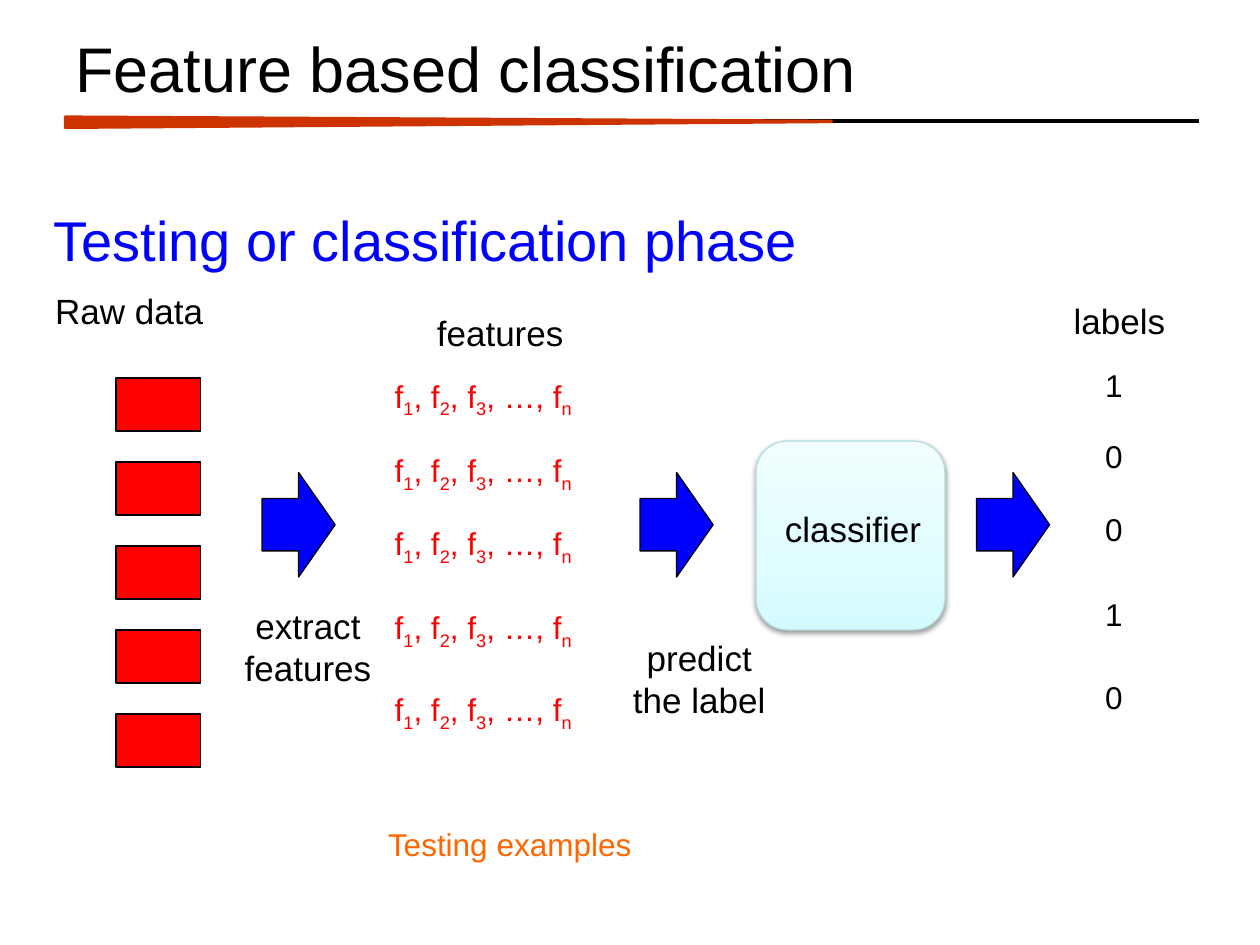
from lxml import etree
from pptx import Presentation
from pptx.dml.color import RGBColor
from pptx.enum.shapes import MSO_CONNECTOR, MSO_SHAPE
from pptx.enum.text import MSO_ANCHOR, MSO_AUTO_SIZE, PP_ALIGN
from pptx.oxml import parse_xml
from pptx.oxml.ns import qn
from pptx.util import Inches, Pt

LEFT, CENTER = PP_ALIGN.LEFT, PP_ALIGN.CENTER
RECTANGLE, ROUNDED = MSO_SHAPE.RECTANGLE, MSO_SHAPE.ROUNDED_RECTANGLE
ARROW, TRIANGLE = MSO_SHAPE.RIGHT_ARROW, MSO_SHAPE.ISOSCELES_TRIANGLE
DRAWING = "http://schemas.openxmlformats.org/drawingml/2006/main"
BLACK, RED, BLUE, ORANGE, RUST = "000000", "FF0000", "0000FF", "FF6600", "CC3300"

TITLE = "Feature based classification"
PHASE = "Testing or classification phase"
CAPTIONS = [
    (["Raw data"], (0.33, 2.25, 1.39, 0.44)),
    (["extract", "features"], (1.83, 4.75, 1.23, 0.77)),
    (["features"], (3.36, 2.42, 1.22, 0.44)),
    (["predict", "the label"], (4.92, 5, 1.26, 0.77)),
    (["labels"], (8.42, 2.33, 0.93, 0.44)),
]
FOOTER = "Testing examples"
FEATURES = [("f", "1"), (", f", "2"), (", f", "3"), (", …, f", "n")]
FEATURE_TOPS = [2.94, 3.53, 4.11, 4.78, 5.43]
LABELS = [("1", 2.86), ("0", 3.42), ("0", 4), ("1", 4.67), ("0", 5.33)]
ARROW_LEFTS = [2.08, 5.08, 7.75]
SAMPLE_COUNT, SAMPLE_TOP, SAMPLE_PITCH = 5, 3, 2 / 3
CLASSIFIER_STOPS = [(0, "D3FBFF"), (35, "DFFCFF"), (100, "F2FEFF")]


def color(value):
    """Turn a hex string into a colour."""
    return RGBColor.from_string(value)


def add_span(para, text, size, ink, baseline=None):
    """Add one run, lowered when a baseline is given."""
    span = para.add_run()
    span.text = text
    span.font.name = "Arial"
    span.font.size = Pt(size)
    span.font.color.rgb = color(ink)
    if baseline:
        span.font._element.set("baseline", str(baseline))


def add_box(shapes, place, size=20, ink=BLACK, lines=(), align=CENTER, wrap=False):
    """Add a text box with one paragraph per line and return it."""
    box = shapes.add_textbox(*map(Inches, place))
    frame = box.text_frame
    frame.word_wrap = wrap
    frame.auto_size = MSO_AUTO_SIZE.NONE
    frame.paragraphs[0].alignment = align
    for index, line in enumerate(lines):
        para = frame.add_paragraph() if index else frame.paragraphs[0]
        para.alignment = align
        add_span(para, line, size, ink)
    return box


def add_block(shapes, kind, place, fill, line=BLACK, width=0.75):
    """Add a filled, outlined preset shape and return it."""
    block = shapes.add_shape(kind, *map(Inches, place))
    block.shadow.inherit = False
    block.fill.solid()
    block.fill.fore_color.rgb = color(fill)
    block.line.color.rgb = color(line)
    block.line.width = Pt(width)
    return block


def add_header(shapes):
    """Add the title with its rule and tapered wedge."""
    rule = shapes.add_connector(
        MSO_CONNECTOR.STRAIGHT, *map(Inches, (0.52, 0.96, 9.52, 0.96)))
    rule.line.color.rgb = color(BLACK)
    rule.line.width = Pt(2)
    etree.SubElement(rule._element.spPr, qn("a:effectLst"))
    wedge = add_block(shapes, TRIANGLE, (3.52, -2.07, 0.08, 6.08), RUST, RUST, 2)
    wedge.rotation = 90
    wedge.adjustments[0] = 0.42
    title = add_box(shapes, (0.5, 0.17, 9, 0.72), 36, BLACK, [TITLE], LEFT, True)
    title.text_frame.vertical_anchor = MSO_ANCHOR.MIDDLE


def add_classifier(shapes):
    """Add the shaded classifier block and its name as a group."""
    group = shapes.add_group_shape()
    block = add_block(group.shapes, ROUNDED, (6, 3.5, 1.5, 1.5), "D3FBFF", "B6DCDF")
    properties = block._element.spPr
    stops = "".join(
        f'<a:gs pos="{position * 1000}"><a:srgbClr val="{tint}"/></a:gs>'
        for position, tint in CLASSIFIER_STOPS)
    gradient = parse_xml(
        f'<a:gradFill xmlns:a="{DRAWING}" rotWithShape="1"><a:gsLst>{stops}</a:gsLst>'
        '<a:lin ang="16200000" scaled="0"/></a:gradFill>')
    properties.replace(properties.find(qn("a:solidFill")), gradient)
    shadow = parse_xml(
        f'<a:outerShdw xmlns:a="{DRAWING}" blurRad="{Pt(3.1)}" dist="{Pt(1.6)}" '
        'dir="5400000" rotWithShape="0"><a:srgbClr val="000000">'
        '<a:alpha val="38000"/></a:srgbClr></a:outerShdw>')
    properties.find(qn("a:effectLst")).append(shadow)
    add_box(group.shapes, (6.12, 3.98, 1.3, 0.44), lines=["classifier"])


def main():
    """Build the feature based classification slide."""
    deck = Presentation()
    deck.slide_width, deck.slide_height = Inches(10), Inches(7.5)
    page = deck.slides.add_slide(deck.slide_layouts[6])
    shapes = page.shapes

    add_header(shapes)
    add_box(shapes, (0.17, 1.58, 6.42, 0.64), 32, BLUE, [PHASE], wrap=True)
    for lines, place in CAPTIONS:
        add_box(shapes, place, lines=lines)
    for index in range(SAMPLE_COUNT):
        top = SAMPLE_TOP + index * SAMPLE_PITCH
        add_block(shapes, RECTANGLE, (0.92, top, 0.67, 0.42), RED)
    for left in ARROW_LEFTS:
        add_block(shapes, ARROW, (left, 3.75, 0.58, 0.83), BLUE)
    for top in FEATURE_TOPS:
        para = add_box(shapes, (3, top, 1.67, 0.4)).text_frame.paragraphs[0]
        for text, subscript in FEATURES:
            add_span(para, text, 18, RED)
            add_span(para, subscript, 18, RED, -25000)
    add_classifier(shapes)
    for label, top in LABELS:
        add_box(shapes, (8.67, top, 0.34, 0.4), 18, lines=[label])
    add_box(shapes, (2.97, 6.5, 2.15, 0.4), 18, ORANGE, [FOOTER])
    deck.save("out.pptx")


if __name__ == "__main__":
    main()
